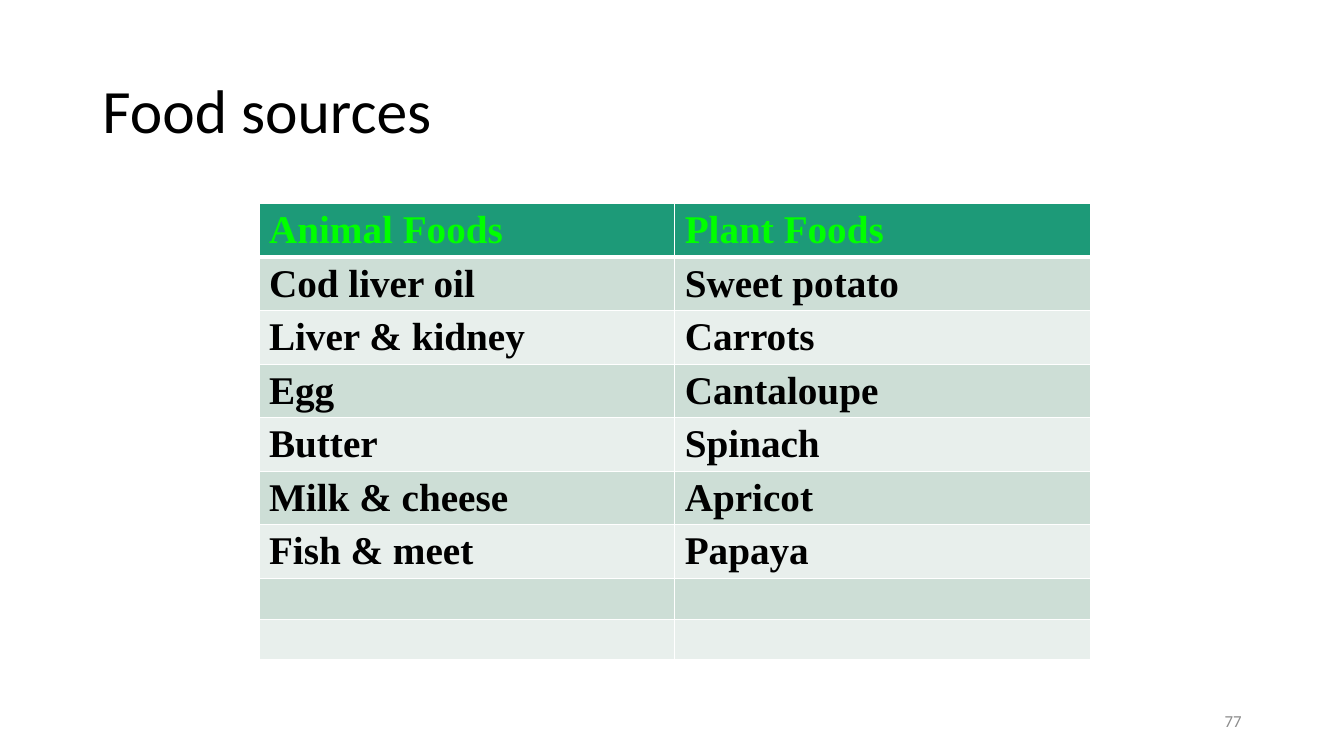
from lxml import etree
from pptx import Presentation
from pptx.dml.color import RGBColor
from pptx.enum import text
from pptx.oxml import ns
from pptx.util import Pt

BLACK = RGBColor(0, 0, 0)
WHITE = RGBColor(255, 255, 255)
GREEN = RGBColor(0x1D, 0x9A, 0x78)
LIME = RGBColor(0, 255, 0)
SAGE = RGBColor(0xCD, 0xDE, 0xD6)
MIST = RGBColor(0xE8, 0xEF, 0xEC)
GRAY = RGBColor(0x8C, 0x8C, 0x8C)

FOODS = [
    ("Animal Foods", "Plant Foods"),
    ("Cod liver oil", "Sweet potato"),
    ("Liver & kidney", "Carrots"),
    ("Egg", "Cantaloupe"),
    ("Butter", "Spinach"),
    ("Milk & cheese", "Apricot"),
    ("Fish & meet", "Papaya"),
    ("", ""),
    ("", ""),
]


class Page:
    sans = "Calibri"
    serif = "Times New Roman"

    def __init__(self, slide):
        self.slide = slide

    def label(self, para, words, size, color, face, bold=False):
        """Add one styled run to a paragraph."""
        run = para.add_run()
        run.text = words
        font = run.font
        font.size, font.name, font.bold = Pt(size), face, bold
        font.color.rgb = color

    def place(self, shape, left, top, width, height):
        """Set the box of a text shape and return its first paragraph."""
        shape.left, shape.top = Pt(left), Pt(top)
        shape.width, shape.height = Pt(width), Pt(height)
        frame = shape.text_frame
        frame.word_wrap = True
        frame.auto_size = text.MSO_AUTO_SIZE.NONE
        frame.vertical_anchor = text.MSO_ANCHOR.MIDDLE
        return frame.paragraphs[0]

    def title(self, words):
        para = self.place(self.slide.shapes.title, 66, 28.75, 828, 104.4)
        para.alignment = text.PP_ALIGN.LEFT
        para.line_spacing = 0.9
        self.label(para, words, 44, BLACK, self.sans)

    def number(self, words):
        box = self.slide.shapes.add_textbox(0, 0, 0, 0)
        para = self.place(box, 678, 500.5, 216, 28.75)
        para.alignment = text.PP_ALIGN.RIGHT
        self.label(para, words, 12, GRAY, self.sans)

    def edge(self, cell, side, width):
        props = cell._tc.get_or_add_tcPr()
        line = etree.SubElement(props, ns.qn("a:" + side), w=str(Pt(width)))
        fill = etree.SubElement(line, ns.qn("a:solidFill"))
        etree.SubElement(fill, ns.qn("a:srgbClr"), val=str(WHITE))

    def cell(self, cell, words, row):
        for side in ("lnL", "lnR", "lnT", "lnB"):
            thick = (row, side) in ((0, "lnB"), (1, "lnT"))
            self.edge(cell, side, 3 if thick else 1)
        cell.fill.solid()
        cell.fill.fore_color.rgb = (MIST, SAGE)[row % 2] if row else GREEN
        if words:
            para = cell.text_frame.paragraphs[0]
            gap = etree.SubElement(para._p.get_or_add_pPr(), ns.qn("a:spcBef"))
            etree.SubElement(gap, ns.qn("a:spcPct"), val="20000")
            self.label(para, words, 28, BLACK if row else LIME, self.serif, True)

    def table(self, rows, left, top, width, high):
        count = len(rows)
        grid = self.slide.shapes.add_table(
            count, len(rows[0]), Pt(left), Pt(top), Pt(width), Pt(high * count)
        ).table
        for row, line in enumerate(rows):
            grid.rows[row].height = Pt(high)
            for col, words in enumerate(line):
                self.cell(grid.cell(row, col), words, row)


def main():
    deck = Presentation()
    deck.slide_width, deck.slide_height = Pt(960), Pt(540)
    page = Page(deck.slides.add_slide(deck.slide_layouts[5]))
    page.title("Food sources")
    page.table(FOODS, 185, 145.6, 594, 29.2)
    page.number("77")
    deck.save("out.pptx")


if __name__ == "__main__":
    main()
